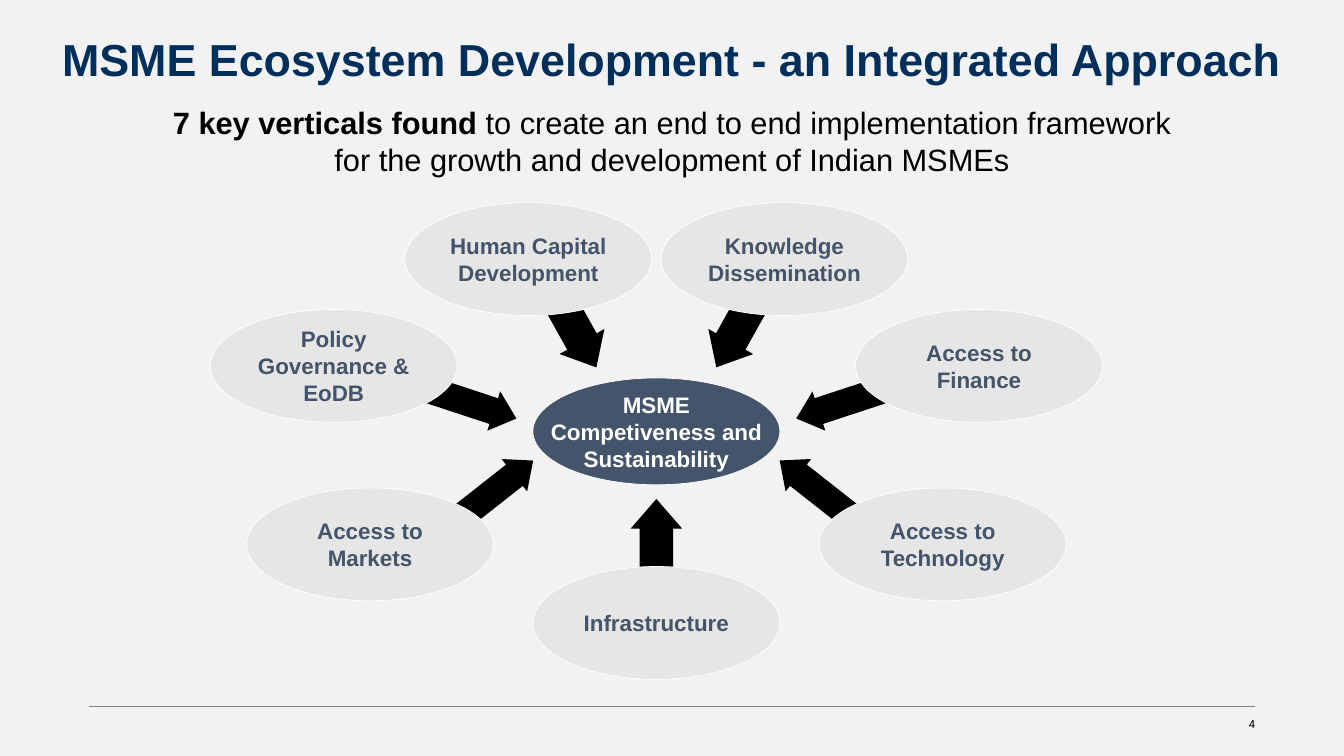
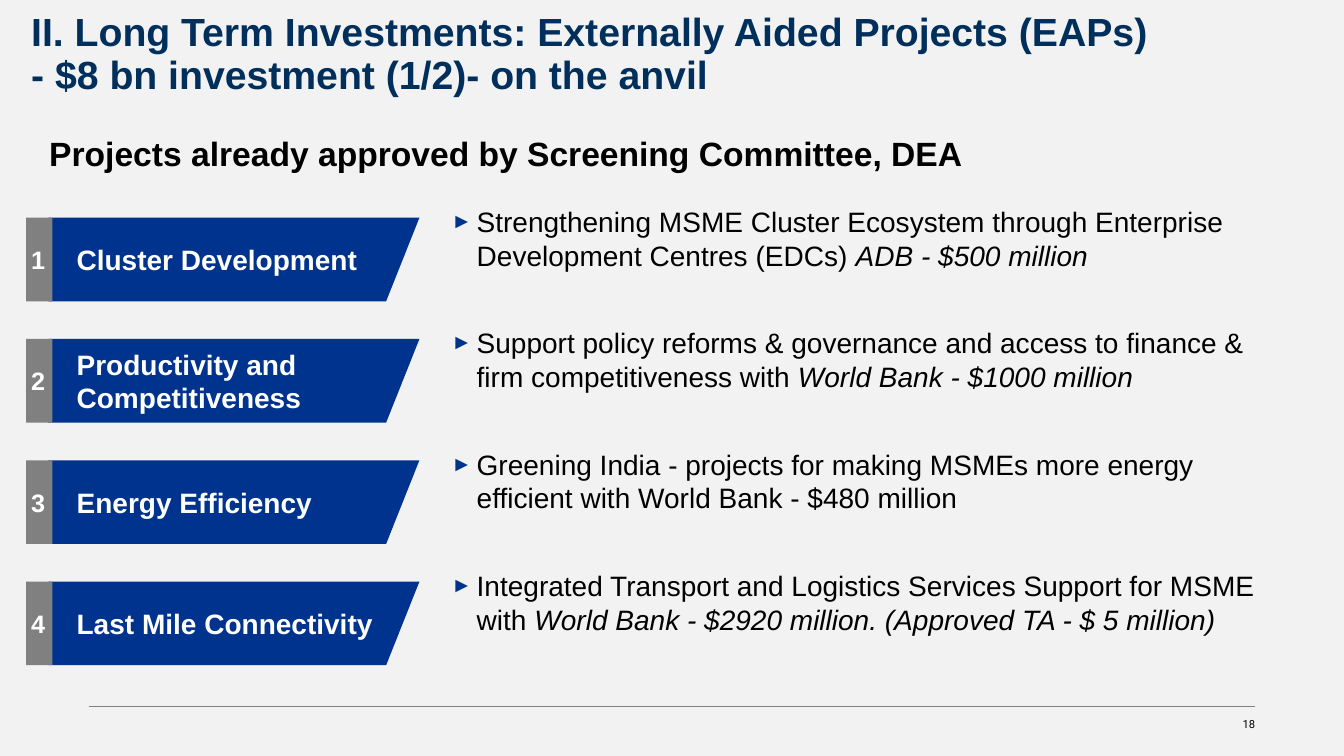
from dataclasses import dataclass
from typing import NamedTuple, Optional

from lxml import etree
from pptx import Presentation
from pptx.dml.color import RGBColor
from pptx.enum.shapes import MSO_CONNECTOR, MSO_SHAPE
from pptx.enum.text import MSO_ANCHOR, MSO_AUTO_SIZE, PP_ALIGN
from pptx.oxml.ns import qn
from pptx.util import Inches, Pt

LEFT, CENTER, RIGHT = PP_ALIGN.LEFT, PP_ALIGN.CENTER, PP_ALIGN.RIGHT
TOP, MIDDLE = MSO_ANCHOR.TOP, MSO_ANCHOR.MIDDLE
OVAL, RECTANGLE, DOWN_ARROW = MSO_SHAPE.OVAL, MSO_SHAPE.RECTANGLE, MSO_SHAPE.DOWN_ARROW
STRAIGHT = MSO_CONNECTOR.STRAIGHT
TITLE_ONLY = 5


@dataclass(frozen=True)
class Theme:
    background: str = "F2F2F2"
    title: str = "002F5C"
    text: str = "000000"
    white: str = "FFFFFF"
    grey: str = "808080"
    slate: str = "44546A"
    pale: str = "E7E6E6"
    blue: str = "00338D"
    font: str = "Arial"
    number_font: str = "Roboto"
    number_size: int = 8
    node_size: int = 16
    index_size: int = 18
    body_size: int = 20
    lead_size: int = 22
    heading_size: int = 24


THEME = Theme()


class Box(NamedTuple):
    left: float
    top: float
    width: float
    height: float


class Run(NamedTuple):
    text: str
    bold: Optional[bool] = None
    italic: Optional[bool] = None


class Style(NamedTuple):
    size: int
    color: str = THEME.text
    bold: bool = False
    align: PP_ALIGN = LEFT
    font: str = THEME.font
    line_spacing: Optional[float] = None
    bullet: Optional[str] = None


class Vertical(NamedTuple):
    """An ellipse and its arrow; offsets run from the hub's centre line."""
    lines: list
    offset: float
    center_y: float
    arrow_offset: float
    arrow_y: float
    arrow_width: float
    arrow_height: float
    rotation: float


class Project(NamedTuple):
    name: str
    description: list


# Slide 1: verticals around the hub
HUB_X = 6.51
ELLIPSE_WIDTH, ELLIPSE_HEIGHT = 2.45, 1.12
STEEP = (0.77, 3.33, 0.51, 0.72, 29.2)
FLAT = (1.82, 4.01, 0.41, 0.91, 71.8)
RISING = (1.58, 4.85, 0.41, 0.91, 128.2)


def mirrored(arrow: tuple) -> tuple:
    offset, center_y, width, height, rotation = arrow
    return -offset, center_y, width, height, 360 - rotation


VERTICALS = [
    Vertical(["Infrastructure"], 0, 6.18, 0, 5.31, 0.51, 0.72, 180),
    Vertical(["Access to", "Technology"], 2.84, 5.4, *RISING),
    Vertical(["Access to", "Finance"], 3.2, 3.63, *FLAT),
    Vertical(["Knowledge", "Dissemination"], 1.27, 2.57, *STEEP),
    Vertical(["Access to", "Markets"], -2.84, 5.4, *mirrored(RISING)),
    Vertical(["Policy", "Governance &", "EoDB"], -3.2, 3.63, *mirrored(FLAT)),
    Vertical(["Human Capital", "Development"], -1.27, 2.57, *mirrored(STEEP)),
]

# Slide 2: project rows
FIRST_ROW, LAST_ROW, BAND_HEIGHT = 2.16, 5.77, 0.83
BAND_LEFT, BAND_RIGHT, BAND_SLANT = 0.48, 4.16, 0.33
PROJECTS = [
    Project("Cluster Development", [
        Run("Strengthening MSME Cluster Ecosystem through Enterprise "
            "Development Centres (EDCs) "),
        Run("ADB - $500 million", italic=True)]),
    Project("Productivity and Competitiveness", [
        Run("Support policy reforms & governance and access to finance & "
            "firm competitiveness with "),
        Run("World Bank - $1000 million", italic=True)]),
    Project("Energy Efficiency", [
        Run("Greening India - projects for making MSMEs more energy efficient "
            "with World Bank - $480 million")]),
    Project("Last Mile Connectivity", [
        Run("Integrated Transport and Logistics Services Support for MSME with "),
        Run("World Bank - $2920 million. (Approved TA - $ 5 million)", italic=True)]),
]


def rgb(color: str) -> RGBColor:
    return RGBColor.from_string(color)


def centered(center_x: float, center_y: float, width: float, height: float) -> Box:
    return Box(center_x - width / 2, center_y - height / 2, width, height)


def inches(box: Box) -> list:
    return [Inches(value) for value in box]


def add_bullet(paragraph, character: str) -> None:
    properties = paragraph._p.get_or_add_pPr()
    properties.set("marL", str(Inches(0.25)))
    properties.set("indent", str(-Inches(0.25)))
    color = etree.SubElement(properties, qn("a:buClr"))
    etree.SubElement(color, qn("a:srgbClr"), val=THEME.blue)
    etree.SubElement(properties, qn("a:buSzPct"), val="75000")
    etree.SubElement(properties, qn("a:buFont"), typeface=THEME.font)
    etree.SubElement(properties, qn("a:buChar"), char=character)


def write(shape, lines: list, style: Style, anchor: MSO_ANCHOR = TOP,
          insets: tuple = (0.1, 0.05, 0.1, 0.05), wrap: bool = True) -> None:
    """Fill a shape with paragraphs, each a string or a list of runs."""
    frame = shape.text_frame
    frame.auto_size = MSO_AUTO_SIZE.NONE
    frame.word_wrap = wrap
    frame.vertical_anchor = anchor
    (frame.margin_left, frame.margin_top,
     frame.margin_right, frame.margin_bottom) = [Inches(inset) for inset in insets]
    for index, line in enumerate(lines):
        paragraph = frame.add_paragraph() if index else frame.paragraphs[0]
        paragraph.alignment = style.align
        if style.line_spacing:
            paragraph.line_spacing = style.line_spacing
        if style.bullet:
            add_bullet(paragraph, style.bullet)
        paragraph.font.name = style.font
        paragraph.font.size = Pt(style.size)
        paragraph.font.bold = style.bold
        paragraph.font.color.rgb = rgb(style.color)
        for part in [Run(line)] if isinstance(line, str) else line:
            run = paragraph.add_run()
            run.text = part.text
            if part.bold is not None:
                run.font.bold = part.bold
            if part.italic is not None:
                run.font.italic = part.italic


def paint(shape, fill: str, line: Optional[str] = None) -> None:
    shape.shadow.inherit = False
    shape.fill.solid()
    shape.fill.fore_color.rgb = rgb(fill)
    if line:
        shape.line.color.rgb = rgb(line)
        shape.line.width = Pt(0.5)
    else:
        shape.line.fill.background()


def add_shape(slide, preset: MSO_SHAPE, box: Box, fill: str, line: Optional[str] = None):
    shape = slide.shapes.add_shape(preset, *inches(box))
    paint(shape, fill, line)
    return shape


def add_text(slide, box: Box, lines: list, style: Style, **layout) -> None:
    write(slide.shapes.add_textbox(*inches(box)), lines, style, **layout)


def add_slide(presentation, title_lines: list, title_box: Box, title_size: int,
              align: PP_ALIGN, number: str):
    """Add a slide with its title, footer rule and page number."""
    slide = presentation.slides.add_slide(presentation.slide_layouts[TITLE_ONLY])
    title = slide.shapes.title
    title.left, title.top, title.width, title.height = inches(title_box)
    write(title, title_lines,
          Style(title_size, THEME.title, True, align, line_spacing=0.9))
    rule = slide.shapes.add_connector(
        STRAIGHT, Inches(0.88), Inches(7.01), Inches(12.45), Inches(7.01))
    rule.line.color.rgb = rgb(THEME.grey)
    rule.line.width = Pt(0.5)
    etree.SubElement(rule._element.spPr, qn("a:effectLst"))
    add_text(slide, Box(11.9, 7.04, 0.55, 0.31), [number],
             Style(THEME.number_size, align=RIGHT, font=THEME.number_font),
             insets=(0.08, 0.08, 0, 0))
    return slide


def add_node(slide, box: Box, lines: list, fill: str, color: str) -> None:
    ellipse = add_shape(slide, OVAL, box, fill, THEME.white)
    write(ellipse, lines, Style(THEME.node_size, color, True, CENTER),
          anchor=MIDDLE, insets=(0, 0, 0, 0), wrap=False)


def add_arrow(slide, vertical: Vertical) -> None:
    box = centered(HUB_X + vertical.arrow_offset, vertical.arrow_y,
                   vertical.arrow_width, vertical.arrow_height)
    arrow = add_shape(slide, DOWN_ARROW, box, THEME.text)
    arrow.adjustments[0] = 0.655
    arrow.adjustments[1] = 0.576
    arrow.rotation = vertical.rotation


def build_ecosystem(presentation) -> None:
    slide = add_slide(presentation, ["MSME Ecosystem Development - an Integrated Approach"],
                      Box(0, 0.32, 13.33, 0.67), 32, CENTER, "4")
    add_text(slide, Box(0.37, 1.04, 12.59, 0.71),
             [[Run("7 key verticals found ", bold=True),
               Run("to create an end to end implementation framework")],
              "for the growth and development of Indian MSMEs"],
             Style(THEME.lead_size, align=CENTER), anchor=MIDDLE)
    add_node(slide, centered(HUB_X, 4.28, ELLIPSE_WIDTH, 1.06),
             ["MSME", "Competiveness and", "Sustainability"], THEME.slate, THEME.white)
    # Ellipses cover the tails of the arrows
    for vertical in VERTICALS:
        add_arrow(slide, vertical)
    for vertical in VERTICALS:
        box = centered(HUB_X + vertical.offset, vertical.center_y,
                       ELLIPSE_WIDTH, ELLIPSE_HEIGHT)
        add_node(slide, box, vertical.lines, THEME.pale, THEME.slate)


def add_project(slide, number: int, project: Project, top: float) -> None:
    add_text(slide, Box(4.38, top - 0.23, 8.3, 1.06), [project.description],
             Style(THEME.body_size, bullet="►"), insets=(0.1, 0.1, 0.1, 0.1))
    # Slanted band with the project name
    bottom = top + BAND_HEIGHT
    builder = slide.shapes.build_freeform(Inches(BAND_LEFT), Inches(top))
    corners = [(BAND_RIGHT, top), (BAND_RIGHT - BAND_SLANT, bottom), (BAND_LEFT, bottom)]
    builder.add_line_segments([(Inches(x), Inches(y)) for x, y in corners])
    band = builder.convert_to_shape()
    paint(band, THEME.blue)
    write(band, [project.name], Style(THEME.body_size, THEME.white, True),
          anchor=MIDDLE, insets=(0.28, 0, 0.32, 0))
    # Number tab
    tab = add_shape(slide, RECTANGLE, Box(0.26, top, 0.26, BAND_HEIGHT), THEME.grey)
    write(tab, [str(number)], Style(THEME.index_size, THEME.white, True),
          anchor=MIDDLE, insets=(0.05, 0.05, 0.05, 0.05))


def build_investments(presentation) -> None:
    slide = add_slide(presentation,
                      ["II. Long Term Investments: Externally Aided Projects (EAPs)",
                       "- $8 bn investment (1/2)- on the anvil"],
                      Box(0.21, 0.08, 12.45, 0.77), 28, LEFT, "18")
    add_text(slide, Box(0.39, 1.22, 10.57, 0.58),
             ["Projects already approved by Screening Committee, DEA"],
             Style(THEME.heading_size, bold=True), insets=(0.1, 0.1, 0.1, 0.1))
    pitch = (LAST_ROW - FIRST_ROW) / (len(PROJECTS) - 1)
    for index, project in enumerate(PROJECTS):
        add_project(slide, index + 1, project, FIRST_ROW + index * pitch)


def main() -> None:
    presentation = Presentation()
    presentation.slide_width, presentation.slide_height = Inches(13.33), Inches(7.5)
    background = presentation.slide_master.background.fill
    background.solid()
    background.fore_color.rgb = rgb(THEME.background)
    build_ecosystem(presentation)
    build_investments(presentation)
    presentation.save("out.pptx")


if __name__ == "__main__":
    main()
